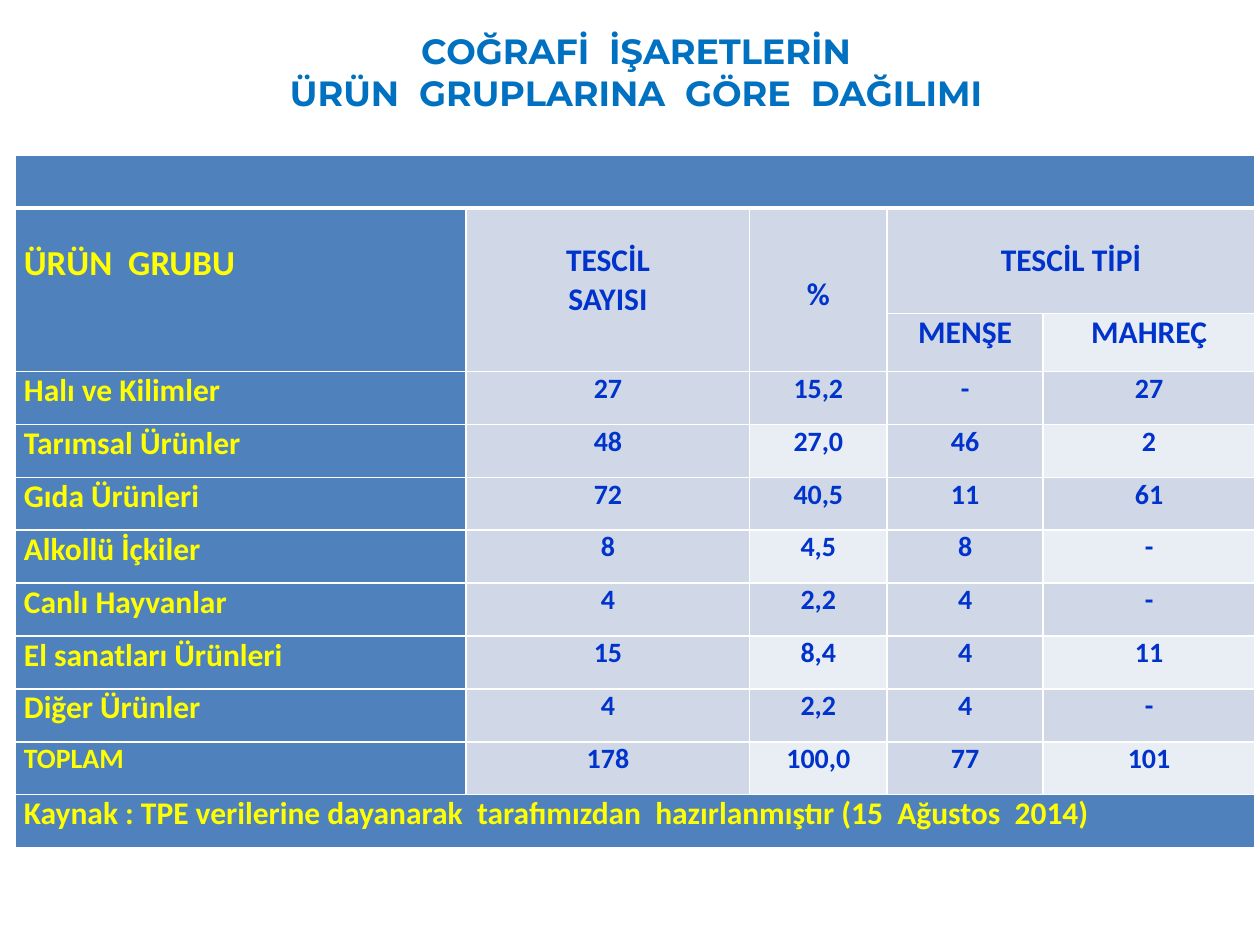
from dataclasses import dataclass

from lxml.etree import SubElement
from pptx import Presentation
from pptx.dml.color import RGBColor
from pptx.enum.text import MSO_ANCHOR, PP_ALIGN
from pptx.oxml.ns import qn
from pptx.util import Inches, Pt


@dataclass(frozen=True)
class Theme:
    title: str = "0070C0"
    label: str = "FFFF00"
    value: str = "0033CC"
    band: str = "4F81BD"
    tint: str = "D0D8E8"
    light_tint: str = "E9EDF4"
    border: str = "FFFFFF"
    title_font: str = "Montserrat"
    table_font: str = "Calibri"
    large: int = 20
    medium: int = 18
    small: int = 16


THEME = Theme()
COLUMN_WIDTHS = [3.58, 2.25, 1.09, 1.24, 1.68]
ROW_HEIGHTS = [0.42, 0.84, 0.46] + [0.42] * 9
HEADER_ROWS = 3
HEADER_LINE = 0.27

ROWS = [
    [""] * 5,
    ["ÜRÜN  GRUBU", "TESCİL\nSAYISI", "%", "TESCİL TİPİ", ""],
    ["", "", "", "MENŞE", "MAHREÇ"],
    ["Halı ve Kilimler", "27", "15,2", "-", "27"],
    ["Tarımsal Ürünler", "48", "27,0", "46", "2"],
    ["Gıda Ürünleri", "72", "40,5", "11", "61"],
    ["Alkollü İçkiler", "8", "4,5", "8", "-"],
    ["Canlı Hayvanlar", "4", "2,2", "4", "-"],
    ["El sanatları Ürünleri", "15", "8,4", "4", "11"],
    ["Diğer Ürünler", "4", "2,2", "4", "-"],
    ["TOPLAM", "178", "100,0", "77", "101"],
    ["Kaynak : TPE verilerine dayanarak  tarafımızdan  hazırlanmıştır (15  Ağustos  2014)"] + [""] * 4,
]
LAST_ROW = len(ROWS) - 1
TOTAL_ROW = LAST_ROW - 1
MERGES = [
    ((0, 0), (0, 4)),
    ((1, 0), (2, 0)),
    ((1, 1), (2, 1)),
    ((1, 2), (2, 2)),
    ((1, 3), (1, 4)),
    ((LAST_ROW, 0), (LAST_ROW, 4)),
]


def format_text(text_frame, font_name, size, color, alignment):
    for paragraph in text_frame.paragraphs:
        paragraph.alignment = alignment
        for run in paragraph.runs:
            run.font.name = font_name
            run.font.size = Pt(size)
            run.font.bold = True
            run.font.color.rgb = RGBColor.from_string(color)


def add_borders(cell, row):
    """Draw thin cell borders, with a thick rule under the top band."""
    properties = cell._tc.get_or_add_tcPr()
    for side in "LRTB":
        thick = (row, side) in ((0, "B"), (1, "T"))
        line = SubElement(properties, qn(f"a:ln{side}"), w=str(Pt(3 if thick else 1)))
        fill = SubElement(line, qn("a:solidFill"))
        SubElement(fill, qn("a:srgbClr"), val=THEME.border)


presentation = Presentation()
presentation.slide_width = Inches(10)
presentation.slide_height = Inches(7.5)
slide = presentation.slides.add_slide(presentation.slide_layouts[6])

title = slide.shapes.add_textbox(Inches(0.13), Inches(0.05), Inches(9.84), Inches(1.04))
title.text_frame.word_wrap = True
title.text_frame.vertical_anchor = MSO_ANCHOR.MIDDLE
title.text_frame.text = "COĞRAFİ  İŞARETLERİN\vÜRÜN  GRUPLARINA  GÖRE  DAĞILIMI"
format_text(title.text_frame, THEME.title_font, THEME.large, THEME.title, PP_ALIGN.CENTER)

table = slide.shapes.add_table(
    len(ROWS), len(COLUMN_WIDTHS), Inches(0.12), Inches(1.23),
    Inches(sum(COLUMN_WIDTHS)), Inches(sum(ROW_HEIGHTS)),
).table
for column, width in zip(table.columns, COLUMN_WIDTHS):
    column.width = Inches(width)
for table_row, height in zip(table.rows, ROW_HEIGHTS):
    table_row.height = Inches(height)
for first, last in MERGES:
    table.cell(*first).merge(table.cell(*last))

for row, texts in enumerate(ROWS):
    for column, text in enumerate(texts):
        cell = table.cell(row, column)
        add_borders(cell, row)

        is_band = column == 0 or row in (0, LAST_ROW)
        is_light = row >= 2 and row % 2 == 0 and column in (2, 4)
        fill_color = THEME.band if is_band else THEME.light_tint if is_light else THEME.tint
        cell.fill.solid()
        cell.fill.fore_color.rgb = RGBColor.from_string(fill_color)

        cell.margin_left = cell.margin_right = Inches(0.07)
        cell.margin_top = cell.margin_bottom = 0
        if row == 1:
            cell.margin_top = Inches(HEADER_LINE * (2 if column == 2 else 1))
        if not text:
            continue

        if row == 1 and column == 0:
            size = THEME.large
        elif row < HEADER_ROWS or (column == 0 and row != TOTAL_ROW):
            size = THEME.medium
        else:
            size = THEME.small
        cell.text_frame.text = text
        format_text(
            cell.text_frame, THEME.table_font, size,
            THEME.label if column == 0 else THEME.value,
            PP_ALIGN.LEFT if column == 0 else PP_ALIGN.CENTER,
        )

presentation.save("out.pptx")
